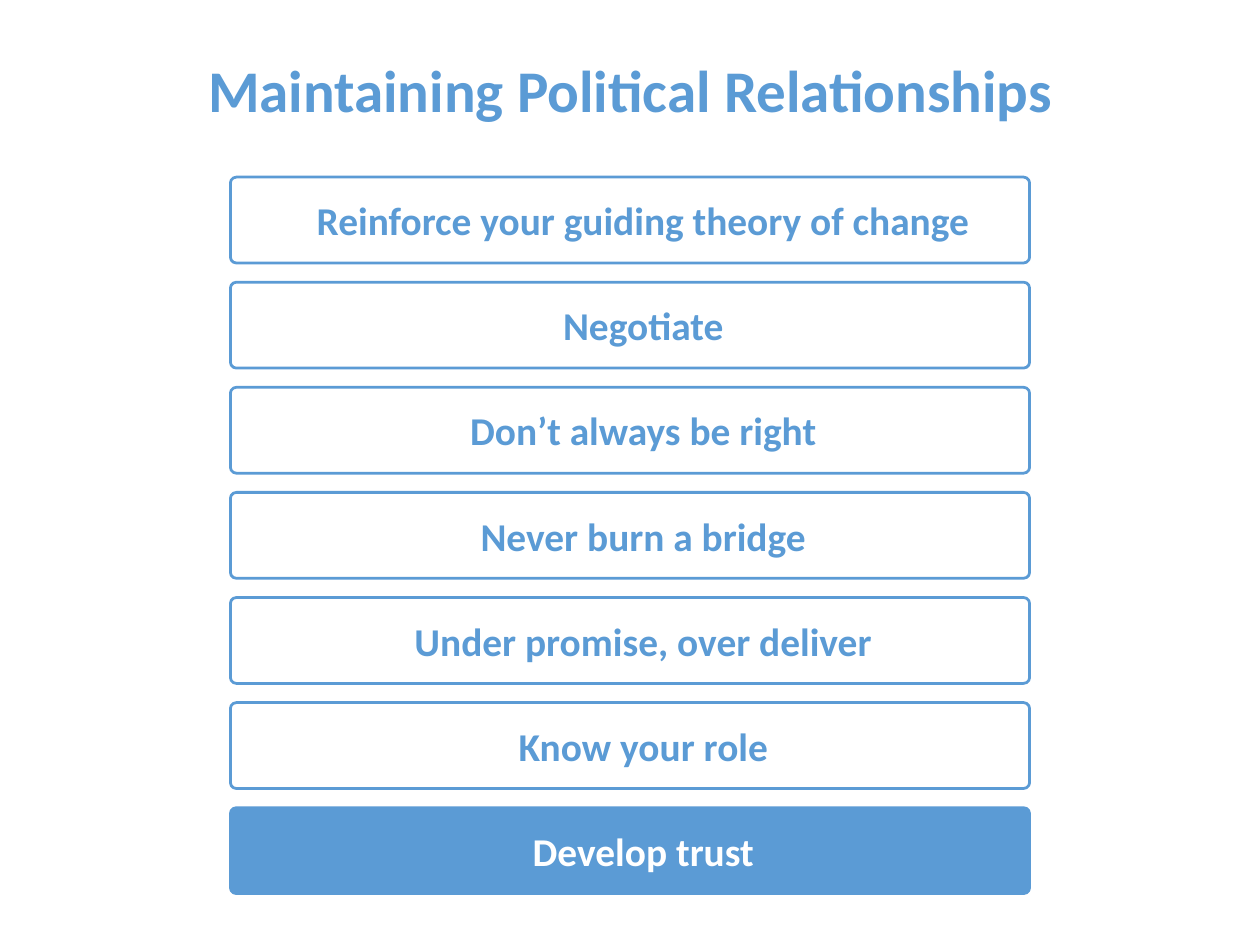
from pptx import Presentation
from pptx.dml.color import RGBColor
from pptx.enum.shapes import MSO_SHAPE
from pptx.enum.text import MSO_ANCHOR, MSO_AUTO_SIZE, PP_ALIGN
from pptx.util import Inches, Pt

COLORS = {"blue": "5B9BD5", "white": "FFFFFF"}
PRINCIPLES = [
    "Reinforce your guiding theory of change",
    "Negotiate",
    "Don’t always be right",
    "Never burn a bridge",
    "Under promise, over deliver",
    "Know your role",
    "Develop trust",
]
FIRST_TOP, LAST_TOP = 2, 9.12
STEP = (LAST_TOP - FIRST_TOP) / (len(PRINCIPLES) - 1)


def color(name):
    return RGBColor.from_string(COLORS[name])


def write_centered(frame, text, size, color_name):
    frame.word_wrap = True
    paragraph = frame.paragraphs[0]
    paragraph.alignment = PP_ALIGN.CENTER
    run = paragraph.add_run()
    run.text = text
    run.font.name = "Calibri"
    run.font.size = Pt(size)
    run.font.bold = True
    run.font.color.rgb = color(color_name)


prs = Presentation()
prs.slide_width = Inches(14.22)
prs.slide_height = Inches(10.67)
slide = prs.slides.add_slide(prs.slide_layouts[5])  # Title Only

heading = slide.shapes.title
heading.left, heading.top = Inches(0.92), Inches(0.55)
heading.width, heading.height = Inches(12.39), Inches(0.91)
heading.text_frame.vertical_anchor = MSO_ANCHOR.TOP
heading.text_frame.auto_size = MSO_AUTO_SIZE.NONE
write_centered(heading.text_frame, "Maintaining Political Relationships", 48, "blue")

for i, principle in enumerate(PRINCIPLES):
    is_foundation = i == len(PRINCIPLES) - 1
    bar = slide.shapes.add_shape(
        MSO_SHAPE.ROUNDED_RECTANGLE,
        Inches(2.6), Inches(FIRST_TOP + i * STEP), Inches(9.02), Inches(0.97),
    )
    bar.adjustments[0] = 0.07
    bar.shadow.inherit = False
    bar.line.color.rgb = color("blue")
    bar.line.width = Pt(2.25)
    if is_foundation:
        bar.fill.solid()
        bar.fill.fore_color.rgb = color("blue")
    else:
        bar.fill.background()
    bar.text_frame.margin_left = Inches(0.4)
    bar.text_frame.vertical_anchor = MSO_ANCHOR.MIDDLE
    write_centered(bar.text_frame, principle, 32, "white" if is_foundation else "blue")

prs.save("out.pptx")
